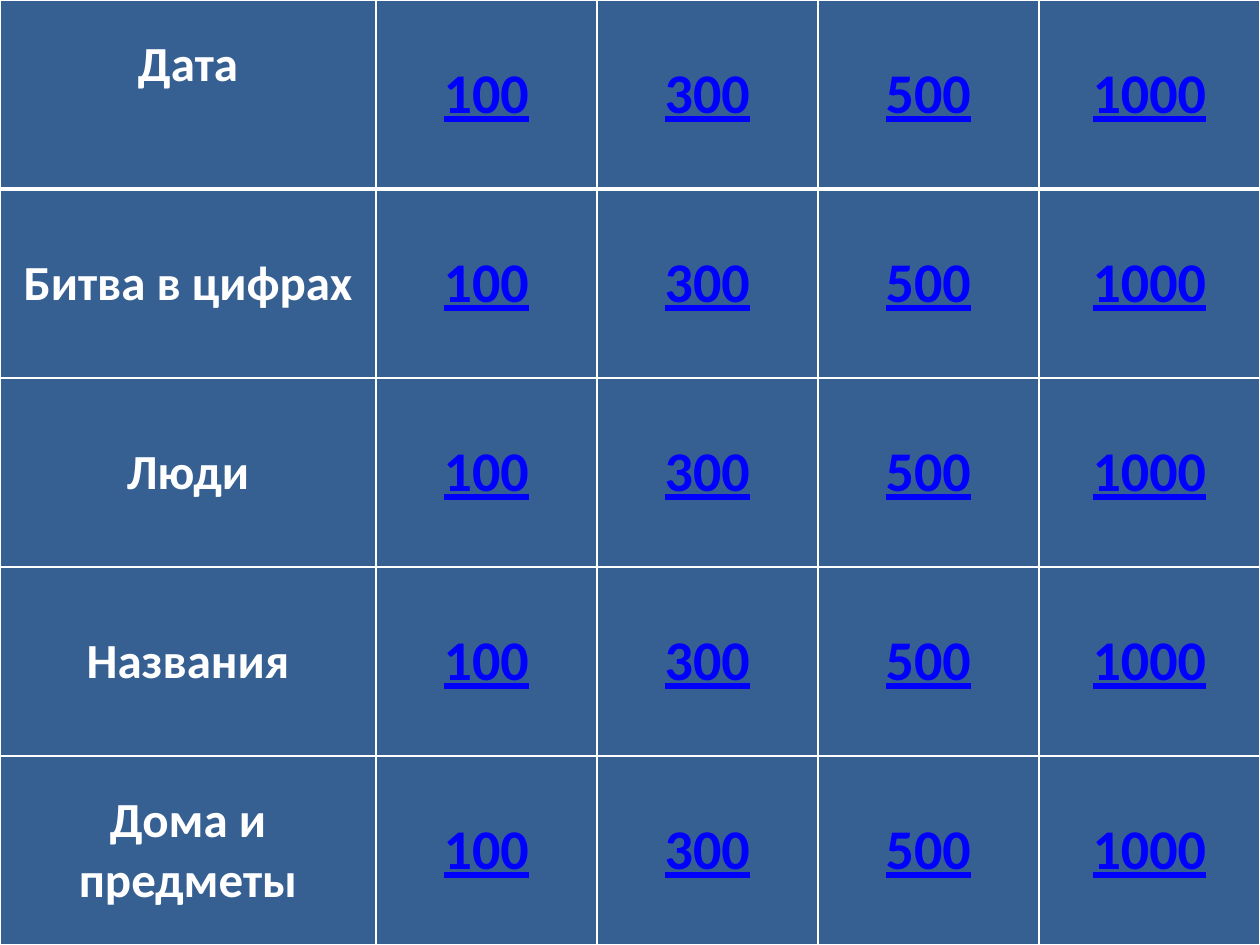
from dataclasses import dataclass

from lxml import etree
from pptx import Presentation
from pptx.dml.color import RGBColor
from pptx.enum.text import MSO_ANCHOR, PP_ALIGN
from pptx.oxml.ns import qn
from pptx.table import _Cell
from pptx.util import Pt

MIDDLE = MSO_ANCHOR.MIDDLE
CENTER = PP_ALIGN.CENTER

SLIDE_WIDTH, SLIDE_HEIGHT = 720, 540
CATEGORY_WIDTH = 214.8
CELL_FILL, WHITE, LINK_BLUE = "376092", "FFFFFF", "0000FF"
THIN, THICK = 1, 3
DEFAULT_MARGIN = 3.6
POINTS = ["100", "300", "500", "1000"]


@dataclass(frozen=True)
class Category:
    name: str
    bottom_margin: float = DEFAULT_MARGIN


CATEGORIES = [
    Category("Дата", bottom_margin=37.6),
    Category("Битва в цифрах"),
    Category("Люди"),
    Category("Названия"),
    Category("Дома и предметы"),
]

BASE_FORMAT = {"name": "Calibri", "bold": True}
CATEGORY_FORMAT = {**BASE_FORMAT, "size": Pt(28), "underline": False}
POINTS_FORMAT = {**BASE_FORMAT, "size": Pt(32), "underline": True}


def rgb(value: str) -> RGBColor:
    return RGBColor.from_string(value)


def set_borders(cell: _Cell, top: float, bottom: float) -> None:
    properties = cell._tc.get_or_add_tcPr()
    widths = {"a:lnL": THIN, "a:lnR": THIN, "a:lnT": top, "a:lnB": bottom}
    for tag, width in widths.items():
        line = etree.SubElement(properties, qn(tag), w=str(Pt(width)))
        fill = etree.SubElement(line, qn("a:solidFill"))
        etree.SubElement(fill, qn("a:srgbClr"), val=WHITE)


def write_cell(cell: _Cell, text: str, font_format: dict, color: str) -> None:
    cell.fill.solid()
    cell.fill.fore_color.rgb = rgb(CELL_FILL)
    cell.vertical_anchor = MIDDLE
    paragraph = cell.text_frame.paragraphs[0]
    paragraph.alignment = CENTER
    run = paragraph.add_run()
    run.text = text
    for attribute, value in font_format.items():
        setattr(run.font, attribute, value)
    run.font.color.rgb = rgb(color)


def main() -> None:
    presentation = Presentation()
    presentation.slide_width = Pt(SLIDE_WIDTH)
    presentation.slide_height = Pt(SLIDE_HEIGHT)
    slide = presentation.slides.add_slide(presentation.slide_layouts[6])

    table = slide.shapes.add_table(
        len(CATEGORIES), len(POINTS) + 1,
        Pt(0), Pt(0), Pt(SLIDE_WIDTH), Pt(SLIDE_HEIGHT),
    ).table
    points_width = (SLIDE_WIDTH - CATEGORY_WIDTH) / len(POINTS)
    for index, column in enumerate(table.columns):
        column.width = Pt(points_width if index else CATEGORY_WIDTH)

    for row_index, (row, category) in enumerate(zip(table.rows, CATEGORIES)):
        row.height = Pt(SLIDE_HEIGHT / len(CATEGORIES))
        top = THICK if row_index == 1 else THIN
        bottom = THICK if row_index == 0 else THIN
        for cell in row.cells:
            set_borders(cell, top, bottom)

        category_cell, *points_cells = row.cells
        write_cell(category_cell, category.name, CATEGORY_FORMAT, WHITE)
        category_cell.margin_bottom = Pt(category.bottom_margin)
        for cell, points in zip(points_cells, POINTS):
            write_cell(cell, points, POINTS_FORMAT, LINK_BLUE)

    presentation.save("out.pptx")


if __name__ == "__main__":
    main()
